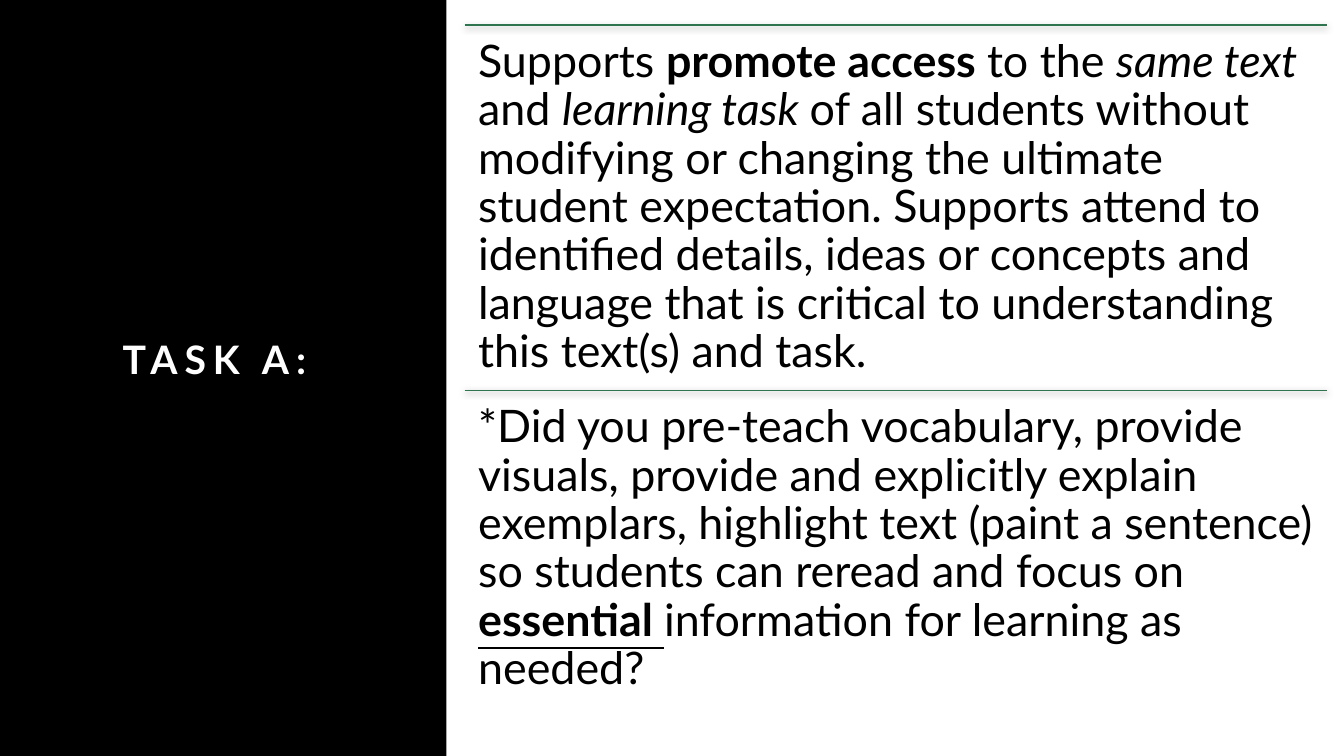
from lxml import etree
from pptx import Presentation
from pptx.dml.color import RGBColor
from pptx.enum.shapes import MSO_CONNECTOR, MSO_SHAPE
from pptx.enum.text import MSO_ANCHOR, PP_ALIGN
from pptx.oxml import parse_xml
from pptx.oxml.ns import nsdecls
from pptx.util import Cm, Pt

RECTANGLE = MSO_SHAPE.RECTANGLE
STRAIGHT = MSO_CONNECTOR.STRAIGHT
MIDDLE = MSO_ANCHOR.MIDDLE
CENTER = PP_ALIGN.CENTER

FONT = "Lato"
COLORS = {"black": "000000", "white": "FFFFFF", "green": "2E744E"}
BODY_LEFT, BODY_TOP, BODY_WIDTH, ROW_HEIGHT = 11.71, 0.63, 21.72, 9.21

ROWS = [
    [
        ("Supports ", ""),
        ("promote access ", "bold"),
        ("to the ", ""),
        ("same text ", "italic"),
        ("and ", ""),
        ("learning task ", "italic"),
        ("of all students without modifying or changing the ultimate student "
         "expectation. Supports attend to identified details, ideas or concepts "
         "and language that is critical to understanding this text(s) and task.", ""),
    ],
    [
        ("*Did you pre-teach vocabulary, provide visuals, provide and explicitly "
         "explain exemplars, highlight text (paint a sentence) so students can "
         "reread and focus on ", ""),
        ("essential ", "bold underline"),
        ("information for learning as needed?", ""),
    ],
]


def rgb(name):
    """Return the named colour."""
    return RGBColor.from_string(COLORS[name])


def style_run(r, size, color, style=""):
    """Format a run; style lists bold, italic or underline."""
    r.font.name = FONT
    r.font.size = Pt(size)
    r.font.color.rgb = rgb(color)
    for attribute in style.split():
        setattr(r.font, attribute, True)


def add_panel(s):
    """Draw the black panel on the left."""
    sp = s.shapes.add_shape(RECTANGLE, 0, 0, Cm(11.25), Cm(19.05))
    sp.shadow.inherit = False
    sp.fill.solid()
    sp.fill.fore_color.rgb = rgb("black")
    sp.line.fill.background()


def add_title(s, text):
    """Write the letter-spaced title on the panel."""
    sp = s.shapes.add_textbox(Cm(1.27), Cm(4.72), Cm(8.69), Cm(9.58))
    tf = sp.text_frame
    tf.word_wrap = True
    tf.vertical_anchor = MIDDLE
    tf.margin_bottom = Cm(1.3)
    p = tf.paragraphs[0]
    p.text = text
    p.alignment = CENTER
    p.line_spacing = 1.2
    r = p.runs[0]
    style_run(r, 28, "white", "bold")
    r.font._element.set("spc", "500")


def add_rule(s, top):
    """Draw a green rule with a soft shadow."""
    line = s.shapes.add_connector(
        STRAIGHT, Cm(BODY_LEFT), Cm(top), Cm(BODY_LEFT + BODY_WIDTH), Cm(top))
    line.line.color.rgb = rgb("green")
    line.line.width = Pt(1)
    effects = parse_xml(f"<a:effectLst {nsdecls('a')}/>")
    shadow = etree.SubElement(
        effects, effects.tag.replace("effectLst", "outerShdw"),
        blurRad=str(Pt(4.5)), dist=str(Pt(1.5)), dir="5400000", rotWithShape="0")
    color = etree.SubElement(
        shadow, effects.tag.replace("effectLst", "srgbClr"), val=COLORS["black"])
    etree.SubElement(color, effects.tag.replace("effectLst", "alpha"), val="63000")
    line._element.spPr.append(effects)


def add_body(s, top, parts):
    """Write one paragraph of mixed styles."""
    sp = s.shapes.add_textbox(Cm(BODY_LEFT), Cm(top), Cm(BODY_WIDTH), Cm(ROW_HEIGHT))
    tf = sp.text_frame
    tf.word_wrap = True
    tf.margin_left = tf.margin_right = tf.margin_top = tf.margin_bottom = Cm(0.34)
    p = tf.paragraphs[0]
    p.line_spacing = 0.9
    for text, style in parts:
        r = p.add_run()
        r.text = text
        style_run(r, 32, "black", style)


def main():
    """Build the slide and save it."""
    prs = Presentation()
    prs.slide_width, prs.slide_height = Cm(33.87), Cm(19.05)
    s = prs.slides.add_slide(prs.slide_layouts[6])
    add_panel(s)
    add_title(s, "TASK A: ")
    for i, parts in enumerate(ROWS):
        top = BODY_TOP + i * ROW_HEIGHT
        add_rule(s, top)
        add_body(s, top, parts)
    prs.save("out.pptx")


if __name__ == "__main__":
    main()
